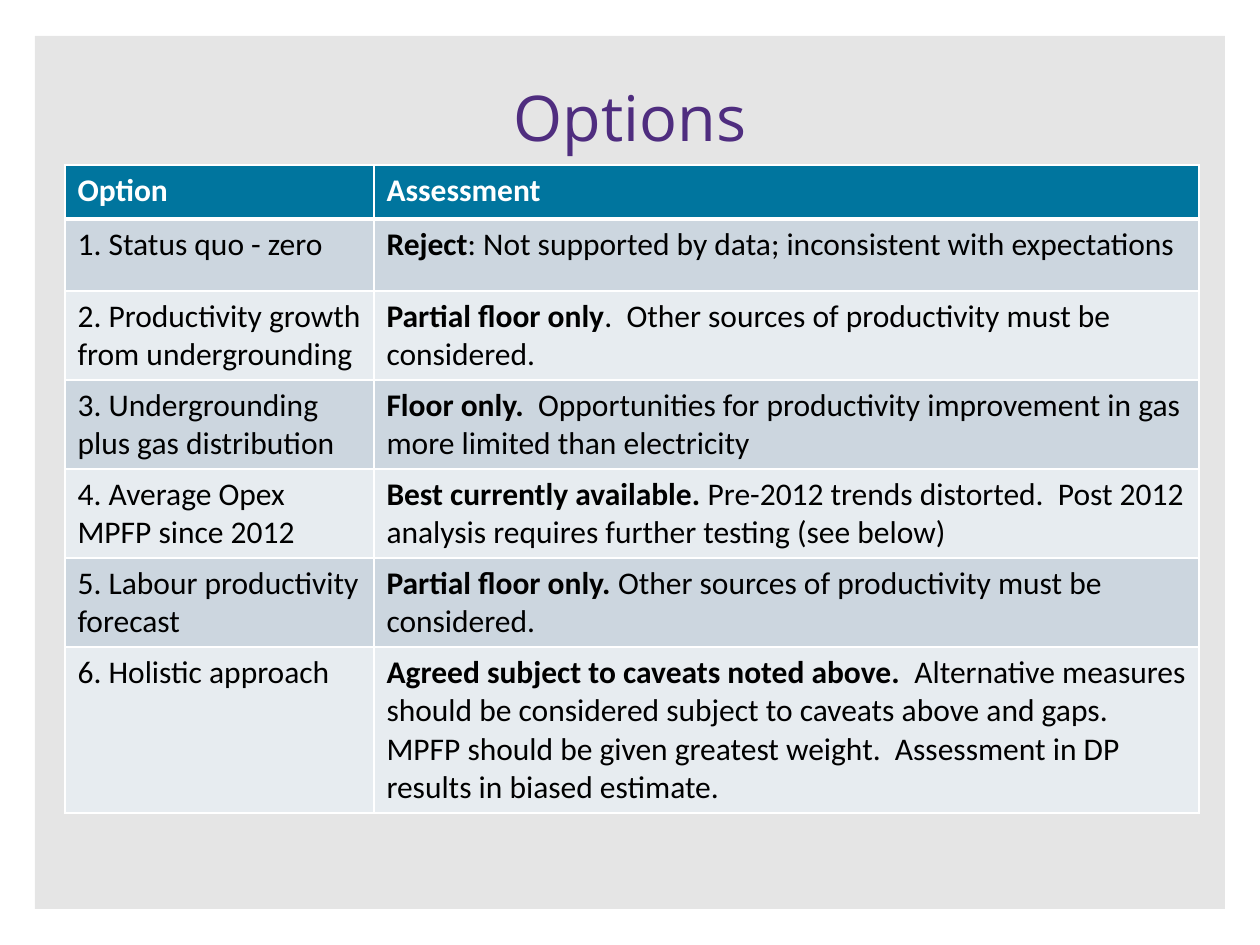
from lxml import etree
from pptx import Presentation
from pptx.dml.color import RGBColor
from pptx.enum.shapes import MSO_SHAPE
from pptx.enum.text import MSO_ANCHOR, PP_ALIGN
from pptx.oxml.ns import qn
from pptx.util import Emu, Pt

RECT = MSO_SHAPE.RECTANGLE
MIDDLE = MSO_ANCHOR.MIDDLE
LEFT, CENTER = PP_ALIGN.LEFT, PP_ALIGN.CENTER
PX = 914400 // 126

THEME = {
    "panel": "000000", "panel_alpha": 10, "title": "4F2D7F",
    "header": "00759E", "bands": ("CCD6DF", "E7ECF0"),
    "white": "FFFFFF", "text": "000000",
    "title_font": "Open Sans", "body_font": "Calibri",
    "title_size": 36, "body_size": 18,
}


def add_text(p, text, *, size=THEME["body_size"], font=THEME["body_font"],
             color=THEME["text"], bold=False, align=LEFT):
    p.alignment = align
    r = p.add_run()
    r.text = text
    r.font.size = Pt(size)
    r.font.name = font
    r.font.bold = bold
    r.font.color.rgb = RGBColor.from_string(color)


def set_cell(cell, fill, bottom=1):
    # Borders come before the fill in the cell properties
    tc_pr = cell._tc.get_or_add_tcPr()
    for side, width in (("L", 1), ("R", 1), ("T", 1), ("B", bottom)):
        ln = etree.SubElement(tc_pr, qn(f"a:ln{side}"), w=str(Pt(width)))
        solid = etree.SubElement(ln, qn("a:solidFill"))
        etree.SubElement(solid, qn("a:srgbClr"), val=THEME["white"])
    cell.fill.solid()
    cell.fill.fore_color.rgb = RGBColor.from_string(fill)


prs = Presentation()
prs.slide_width, prs.slide_height = Emu(1260 * PX), Emu(945 * PX)
s = prs.slides.add_slide(prs.slide_layouts[6])

# Translucent background panel
panel = s.shapes.add_shape(RECT, 35 * PX, 36 * PX, 1190 * PX, 873 * PX)
panel.shadow.inherit = False
panel.line.fill.background()
panel.fill.solid()
panel.fill.fore_color.rgb = RGBColor.from_string(THEME["panel"])
color = panel._element.spPr.find(qn("a:solidFill")).find(qn("a:srgbClr"))
etree.SubElement(color, qn("a:alpha"), val=str(THEME["panel_alpha"] * 1000))

# Title
title = s.shapes.add_textbox(63 * PX, 38 * PX, 1134 * PX, 157 * PX)
tf = title.text_frame
tf.word_wrap = True
tf.vertical_anchor = MIDDLE
add_text(tf.paragraphs[0], "Options", size=THEME["title_size"],
         font=THEME["title_font"], color=THEME["title"], align=CENTER)

# Options table: option, verdict in bold, remaining assessment
headings = ("Option", "Assessment")
options = [
    ("1. Status quo - zero", "Reject",
     ": Not supported by data; inconsistent with expectations"),
    ("2. Productivity growth from undergrounding", "Partial floor only",
     ".  Other sources of productivity must be considered."),
    ("3. Undergrounding plus gas distribution", "Floor only.",
     "  Opportunities for productivity improvement in gas more limited than electricity"),
    ("4. Average Opex MPFP since 2012", "Best currently available.",
     " Pre-2012 trends distorted.  Post 2012 analysis requires further testing (see below)"),
    ("5. Labour productivity forecast", "Partial floor only. ",
     "Other sources of productivity must be considered."),
    ("6. Holistic approach", "Agreed subject to caveats noted above. ",
     " Alternative measures should be considered subject to caveats above and gaps.  "
     "MPFP should be given greatest weight.  Assessment in DP results in biased estimate."),
]
col_widths = (309, 825)
row_heights = (54, 72, 89, 89, 89, 89, 166)

frame = s.shapes.add_table(len(row_heights), len(col_widths), 65 * PX, 165 * PX,
                           sum(col_widths) * PX, sum(row_heights) * PX)
table = frame.table
for column, width in zip(table.columns, col_widths):
    column.width = Emu(width * PX)
for row, height in zip(table.rows, row_heights):
    row.height = Emu(height * PX)

for cell, heading in zip(table.rows[0].cells, headings):
    set_cell(cell, THEME["header"], bottom=3)
    add_text(cell.text_frame.paragraphs[0], heading, color=THEME["white"], bold=True)

for i, (option, verdict, detail) in enumerate(options):
    name_cell, assessment_cell = table.rows[i + 1].cells
    for cell in (name_cell, assessment_cell):
        set_cell(cell, THEME["bands"][i % 2])
        if i == 0:
            top = cell._tc.tcPr.find(qn("a:lnT"))
            top.set("w", str(Pt(3)))
    add_text(name_cell.text_frame.paragraphs[0], option)
    p = assessment_cell.text_frame.paragraphs[0]
    add_text(p, verdict, bold=True)
    add_text(p, detail)

prs.save("out.pptx")
